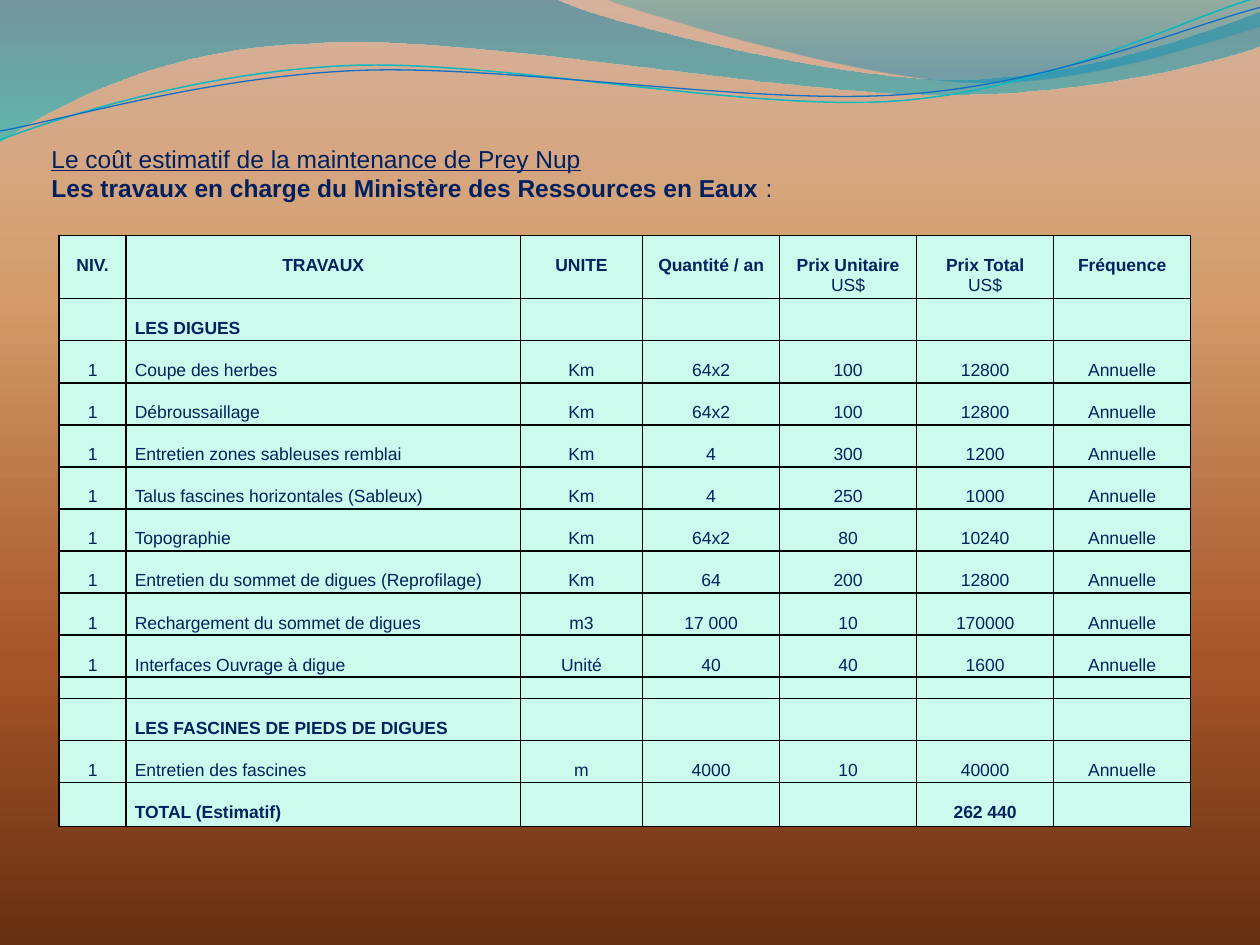
import math

import pptx
import pptx.dml.color
import pptx.enum.text
import pptx.oxml.ns
import pptx.util
from lxml import etree

Inches = pptx.util.Inches
Pt = pptx.util.Pt
ALIGN = pptx.enum.text.PP_ALIGN
qn = pptx.oxml.ns.qn

COLORS = {"text": "002060", "cell": "CAFBED", "border": "000000",
          "cyan line": "0AB8BF", "blue line": "0F6FC6"}

# Gradient stops: position %, colour, opacity %
BACKGROUND = [(0, "D6B19C", 100), (30, "D49E6C", 100),
              (70, "A65528", 100), (100, "663012", 100)]

# Outlines: a pair is a straight step, a triple of pairs is a Bézier curve
WAVES = [
    {"start": (0, 0),
     "steps": [(4.4, -0.01),
               ((4.76, 0.17), (6.64, 0.63), (7.58, 0.63)),
               ((8.53, 0.63), (9.58, 0.26), (10, 0.09)),
               (10.01, 0.36),
               ((9.83, 0.44), (8.7, 0.76), (7.46, 0.75)),
               ((6.22, 0.75), (3.82, 0.28), (2.57, 0.34)),
               ((1.29, 0.36), (0.46, 0.83), (-0.01, 1.13)),
               (0, 0)],
     "stops": [(0, "0074A1", 45), (100, "00C6CF", 55)]},
    {"start": (4.79, -0.01),
     "steps": [((5.09, 0.11), (6.82, 0.62), (7.69, 0.65)),
               ((8.56, 0.69), (9.61, 0.32), (10, 0.21)),
               (10, 0),
               (4.79, -0.01)],
     "stops": [(0, "00A1A9", 30), (80, "008BBF", 45)]},
    {"start": (0, 1.11),
     "steps": [((0.48, 0.93), (1.58, 0.57), (2.77, 0.52)),
               ((3.95, 0.47), (5.93, 0.89), (7.13, 0.8)),
               ((8.33, 0.71), (9.38, 0.15), (9.98, -0.02))],
     "line": ("cyan line", 0.85), "tilt": -2.7, "center": (4.99, 0.57)},
    {"start": (0, 1.04),
     "steps": [((0.47, 0.96), (1.64, 0.61), (2.83, 0.56)),
               ((4.03, 0.51), (5.97, 0.84), (7.17, 0.75)),
               ((8.36, 0.67), (9.41, 0.21), (10, 0.06))],
     "line": ("blue line", 0.75), "tilt": -2.7, "center": (5, 0.59)},
]

HEADING = [
    [("Le coût estimatif de la maintenance de Prey Nup", {"underline": True}), (" ", {})],
    [("Les travaux en charge du Ministère des Ressources en Eaux ", {"bold": True}), (":", {})],
]

HEADERS = ["NIV.", "TRAVAUX", "UNITE", "Quantité / an",
           "Prix Unitaire\nUS$", "Prix Total\nUS$", "Fréquence"]
# Each work: name, unit, quantity, unit price, total price
DIKE_WORKS = [
    ("Coupe des herbes", "Km", "64x2", "100", "12800"),
    ("Débroussaillage", "Km", "64x2", "100", "12800"),
    ("Entretien zones sableuses remblai", "Km", "4", "300", "1200"),
    ("Talus fascines horizontales (Sableux)", "Km", "4", "250", "1000"),
    ("Topographie", "Km", "64x2", "80", "10240"),
    ("Entretien du sommet de digues (Reprofilage)", "Km", "64", "200", "12800"),
    ("Rechargement du sommet de digues", "m3", "17 000", "10", "170000"),
    ("Interfaces Ouvrage à digue", "Unité", "40", "40", "1600"),
]
FASCINE_WORKS = [("Entretien des fascines", "m", "4000", "10", "40000")]

TABLE_WIDTH, TABLE_HEIGHT = 8.98, 4.69
FIRST_WIDTHS = [0.53, 3.13, 0.97]
COLUMN_WIDTHS = FIRST_WIDTHS + [(TABLE_WIDTH - sum(FIRST_WIDTHS)) / 4] * 4
HEADER_HEIGHT, TOTAL_HEIGHT = 0.5, 0.35
# Eleven full rows and a gap of half a row share the rest
ROW_HEIGHT = (TABLE_HEIGHT - HEADER_HEIGHT - TOTAL_HEIGHT) / 11.5


def summary_row(title, total=""):
    return ["", title, "", "", "", total, ""]


def work_rows(works):
    return [(ROW_HEIGHT, False, ["1", *work, "Annuelle"]) for work in works]


# Row height, bold, texts
ROWS = [(HEADER_HEIGHT, True, HEADERS),
        (ROW_HEIGHT, True, summary_row("LES DIGUES")),
        *work_rows(DIKE_WORKS),
        (ROW_HEIGHT / 2, False, summary_row("")),
        (ROW_HEIGHT, True, summary_row("LES FASCINES DE PIEDS DE DIGUES")),
        *work_rows(FASCINE_WORKS),
        (TOTAL_HEIGHT, True, summary_row("TOTAL (Estimatif)", "262 440"))]


def rgb(name):
    return pptx.dml.color.RGBColor.from_string(COLORS[name])


def add_text(paragraph, text, size=10, bold=False, underline=False, align=ALIGN.LEFT):
    paragraph.alignment = align
    run = paragraph.add_run()
    run.text = text
    run.font.name = "Arial"
    run.font.size = Pt(size)
    run.font.bold = bold
    run.font.underline = underline
    run.font.color.rgb = rgb("text")


def paint_gradient(fill, element, stops):
    """Give the fill, which belongs to element, a top-down gradient."""
    fill.gradient()
    fill.gradient_angle = 270
    stop_list = element.xpath(".//a:gsLst")[0]
    for default_stop in list(stop_list):
        stop_list.remove(default_stop)
    for position, color, opacity in stops:
        stop = etree.SubElement(stop_list, qn("a:gs"), pos=str(position * 1000))
        color_node = etree.SubElement(stop, qn("a:srgbClr"), val=color)
        if opacity < 100:
            etree.SubElement(color_node, qn("a:alpha"), val=str(opacity * 1000))


def turn(point, center, degrees):
    """Turn a point clockwise, in slide inches, and give it as lengths."""
    angle = math.radians(degrees)
    x, y = point[0] - center[0], point[1] - center[1]
    return (Inches(center[0] + x * math.cos(angle) - y * math.sin(angle)),
            Inches(center[1] + x * math.sin(angle) + y * math.cos(angle)))


def bend(shape, steps):
    """Turn the straight segments of each curved step into one Bézier curve."""
    segments = iter(shape.element.xpath(".//a:lnTo"))
    for step in steps:
        segment = next(segments)
        if isinstance(step[0], tuple):
            segment.tag = qn("a:cubicBezTo")
            for _ in range(2):
                extra = next(segments)
                segment.append(extra[0])
                extra.getparent().remove(extra)


def add_wave(slide, start, steps, stops=None, line=None, tilt=0, center=(0, 0)):
    points = [start]
    for step in steps:
        points.extend(step if isinstance(step[0], tuple) else [step])
    first, *rest = [turn(point, center, -tilt) for point in points]
    builder = slide.shapes.build_freeform(*first)
    builder.add_line_segments(rest, close=stops is not None)
    wave = builder.convert_to_shape()
    bend(wave, steps)
    wave.rotation = tilt
    wave.shadow.inherit = False
    if stops:
        paint_gradient(wave.fill, wave.element, stops)
        wave.line.fill.background()
    else:
        wave.fill.background()
        wave.line.color.rgb = rgb(line[0])
        wave.line.width = Pt(line[1])


def add_heading(slide):
    frame = slide.shapes.add_textbox(Inches(0.31), Inches(1.09),
                                     Inches(9.14), Inches(0.57)).text_frame
    frame.word_wrap = True
    for i, runs in enumerate(HEADING):
        paragraph = frame.add_paragraph() if i else frame.paragraphs[0]
        for text, style in runs:
            add_text(paragraph, text, size=14, align=ALIGN.JUSTIFY, **style)


def style_cell(cell):
    cell.margin_left = cell.margin_right = Inches(0.07)
    cell.margin_top = cell.margin_bottom = 0
    properties = cell._tc.get_or_add_tcPr()
    for side in ("lnL", "lnR", "lnT", "lnB"):
        border = etree.SubElement(properties, qn("a:" + side), w=str(Pt(1)))
        solid = etree.SubElement(border, qn("a:solidFill"))
        etree.SubElement(solid, qn("a:srgbClr"), val=COLORS["border"])
    cell.fill.solid()
    cell.fill.fore_color.rgb = rgb("cell")


def fill_cell(cell, text, bold, align):
    frame = cell.text_frame
    if not text:
        etree.SubElement(frame.paragraphs[0]._p, qn("a:endParaRPr"), sz="1000")
        return
    cell.margin_top = Inches(0.16)
    for i, line in enumerate(text.split("\n")):
        paragraph = frame.add_paragraph() if i else frame.paragraphs[0]
        add_text(paragraph, line, bold=bold and i == 0, align=align)


def add_cost_table(slide):
    table = slide.shapes.add_table(
        len(ROWS), len(HEADERS), Inches(0.47), Inches(1.87),
        Inches(TABLE_WIDTH), Inches(TABLE_HEIGHT)).table
    table.first_row = table.horz_banding = False
    for column, width in zip(table.columns, COLUMN_WIDTHS):
        column.width = Inches(width)
    for r, (height, bold, texts) in enumerate(ROWS):
        table.rows[r].height = Inches(height)
        for c, text in enumerate(texts):
            style_cell(table.cell(r, c))
            align = ALIGN.LEFT if c == 1 and r else ALIGN.CENTER
            fill_cell(table.cell(r, c), text, bold, align)


def main():
    deck = pptx.Presentation()
    deck.slide_width, deck.slide_height = Inches(10), Inches(7.5)
    slide = deck.slides.add_slide(deck.slide_layouts[6])
    paint_gradient(slide.background.fill, slide.element, BACKGROUND)
    for wave in WAVES:
        add_wave(slide, **wave)
    add_heading(slide)
    add_cost_table(slide)
    deck.save("out.pptx")


if __name__ == "__main__":
    main()
